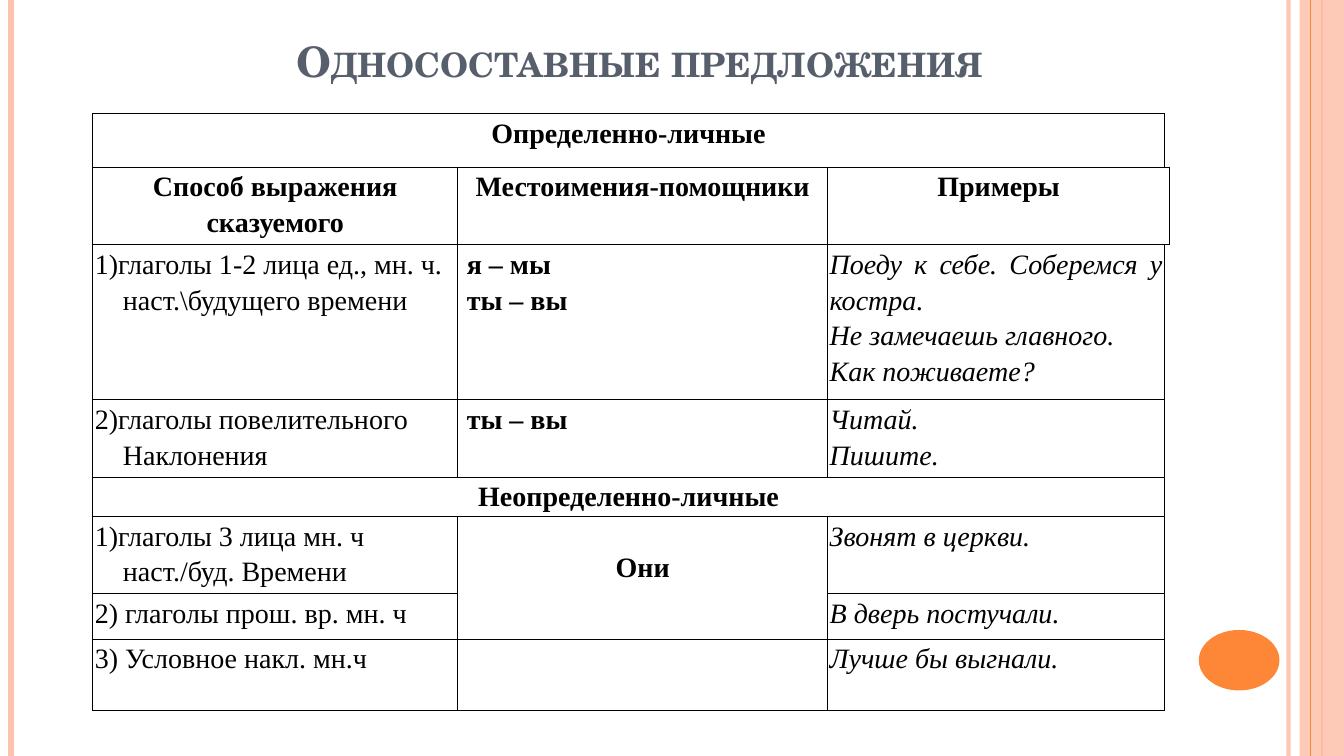
from lxml import etree
from pptx import Presentation
from pptx.dml.color import RGBColor
from pptx.enum.shapes import MSO_CONNECTOR, MSO_SHAPE
from pptx.enum.text import MSO_ANCHOR, PP_ALIGN
from pptx.oxml.ns import qn
from pptx.util import Emu, Inches, Pt

WIDTH, HEIGHT = 13.33, 7.5
ORANGE, PEACH, SLATE, BLACK = "FE8637", "FEC3AE", "575F6D", "000000"
LEFT, CENTER, JUSTIFY = PP_ALIGN.LEFT, PP_ALIGN.CENTER, PP_ALIGN.JUSTIFY
HANGING = 0.28
COLUMNS = [3.62, 3.67, 3.34, 0.05]
ROWS = [0.53, 0.74, 1.54, 0.74, 0.39, 0.74, 0.45, 0.71]
EDGE = len(COLUMNS) - 1

HEADINGS = {
    (0, 0): "Определенно-личные",
    (1, 0): "Способ выражения сказуемого",
    (1, 1): "Местоимения-помощники",
    (1, 2): "Примеры",
    (4, 0): "Неопределенно-личные",
    (5, 1): "Они",
}
PREDICATES = {
    2: "1)глаголы 1-2 лица ед., мн. ч. наст.\\будущего времени",
    3: "2)глаголы повелительного\vНаклонения",
    5: "1)глаголы 3 лица мн. ч\vнаст./буд. Времени",
    6: "2) глаголы прош. вр. мн. ч",
    7: "3) Условное накл. мн.ч",
}
PRONOUNS = {2: "я – мы\nты – вы", 3: "ты – вы"}
EXAMPLES = {
    2: "Поеду к себе. Соберемся у костра.\nНе замечаешь главного.\nКак поживаете?",
    3: "Читай.\nПишите.",
    5: "Звонят в церкви.",
    6: "В дверь постучали.",
    7: "Лучше бы выгнали.",
}
# Top-left and bottom-right cells of each merged area
MERGES = [((0, 0), (0, 2)), ((1, 2), (1, 3)), ((4, 0), (4, 2)), ((5, 1), (6, 1))]


def rgb(color):
    return RGBColor.from_string(color)


def set_opacity(fill_parent, percent):
    color = next(fill_parent.iter(qn("a:srgbClr")))
    etree.SubElement(color, qn("a:alpha")).set("val", str(percent * 1000))


def add_stripe(slide, x, color, weight):
    """Draw a vertical line over the full height of the slide."""
    stripe = slide.shapes.add_connector(
        MSO_CONNECTOR.STRAIGHT, Inches(x), 0, Inches(x), Inches(HEIGHT))
    stripe.line.color.rgb = rgb(color)
    stripe.line.width = Pt(weight)
    etree.SubElement(stripe._element.spPr, qn("a:effectLst"))
    return stripe


def add_plain_shape(slide, kind, box, color):
    shape = slide.shapes.add_shape(kind, *map(Inches, box))
    shape.shadow.inherit = False
    shape.fill.solid()
    shape.fill.fore_color.rgb = rgb(color)
    shape.line.fill.background()
    return shape


def add_decoration(slide):
    inner = add_stripe(slide, WIDTH - 0.55, PEACH, 3)
    set_opacity(inner._element.spPr, 93)
    add_stripe(slide, 0.11, PEACH, 4.5)
    add_stripe(slide, WIDTH - 0.22, ORANGE, 1.5)
    band = add_plain_shape(slide, MSO_SHAPE.RECTANGLE, (WIDTH - 0.44, 0, 0.44, HEIGHT), PEACH)
    set_opacity(band._element.spPr, 87)
    add_stripe(slide, WIDTH - 0.33, ORANGE, 0.75)
    add_plain_shape(slide, MSO_SHAPE.OVAL, (11.89, 6.25, 0.8, 0.6), ORANGE)


def format_run(run, font, size, color, bold=False, italic=False):
    run.font.name, run.font.size = font, Pt(size)
    run.font.color.rgb = rgb(color)
    run.font.bold, run.font.italic = bold, italic


def add_title(slide, box, text):
    frame = slide.shapes.add_textbox(*map(Inches, box)).text_frame
    frame.word_wrap = True
    frame.vertical_anchor = MSO_ANCHOR.BOTTOM
    frame.text = text
    paragraph = frame.paragraphs[0]
    paragraph.alignment = CENTER
    run = paragraph.runs[0]
    format_run(run, "TeX Gyre Schola", 30, SLATE, bold=True)
    run.font._element.set("cap", "small")


def fill_cell(cell, text, alignment=LEFT, indent=0, hanging=0, **style):
    cell.text_frame.text = text
    for paragraph in cell.text_frame.paragraphs:
        paragraph.alignment = alignment
        paragraph.line_spacing = 1.15
        properties = paragraph._element.get_or_add_pPr()
        properties.set("marL", str(Inches(indent + hanging)))
        properties.set("indent", str(-Inches(hanging)))
        for run in paragraph.runs:
            format_run(run, "Times New Roman", 20, BLACK, **style)


def set_borders(cell, sides):
    """Draw the named sides (of L, R, T, B) and hide the others."""
    properties = cell._tc.get_or_add_tcPr()
    for position, side in enumerate("LRTB"):
        line = etree.Element(qn("a:ln" + side), w=str(Pt(1)))
        properties.insert(position, line)
        if side in sides:
            fill = etree.SubElement(line, qn("a:solidFill"))
            etree.SubElement(fill, qn("a:srgbClr")).set("val", BLACK)
        else:
            etree.SubElement(line, qn("a:noFill"))


def visible_sides(row, column):
    """The narrow last column only closes the table on its left."""
    if column < EDGE or row == 1:
        return "LRTB"
    return "L" + {0: "B", 2: "T"}.get(row, "")


def add_grammar_table(slide, left, top):
    table = slide.shapes.add_table(
        len(ROWS), len(COLUMNS), Inches(left), Inches(top),
        Inches(sum(COLUMNS)), Inches(sum(ROWS))).table
    table.first_row = table.horz_banding = False
    for column, width in zip(table.columns, COLUMNS):
        column.width = Inches(width)
    for row, height in zip(table.rows, ROWS):
        row.height = Inches(height)
    for row in range(len(ROWS)):
        for column in range(len(COLUMNS)):
            cell = table.cell(row, column)
            cell.margin_left = cell.margin_right = Inches(0.02 if column < EDGE else 0)
            cell.margin_top = cell.margin_bottom = Emu(0)
            cell.fill.background()
            set_borders(cell, visible_sides(row, column))
    for first, last in MERGES:
        table.cell(*first).merge(table.cell(*last))

    for place, text in HEADINGS.items():
        fill_cell(table.cell(*place), text, CENTER, bold=True)
    table.cell(5, 1).margin_top = Inches(0.31)
    for row, text in PREDICATES.items():
        fill_cell(table.cell(row, 0), text, hanging=HANGING)
    for row, text in PRONOUNS.items():
        fill_cell(table.cell(row, 1), text, indent=0.07, bold=True)
    for row, text in EXAMPLES.items():
        fill_cell(table.cell(row, 2), text, JUSTIFY if row == 2 else LEFT, italic=True)


def main():
    presentation = Presentation()
    presentation.slide_width, presentation.slide_height = Inches(WIDTH), Inches(HEIGHT)
    slide = presentation.slides.add_slide(presentation.slide_layouts[6])
    add_decoration(slide)
    add_title(slide, (0.9, 0.26, 10.89, 0.64), "Односоставные предложения")
    add_grammar_table(slide, 0.92, 1.13)
    presentation.save("out.pptx")


if __name__ == "__main__":
    main()
